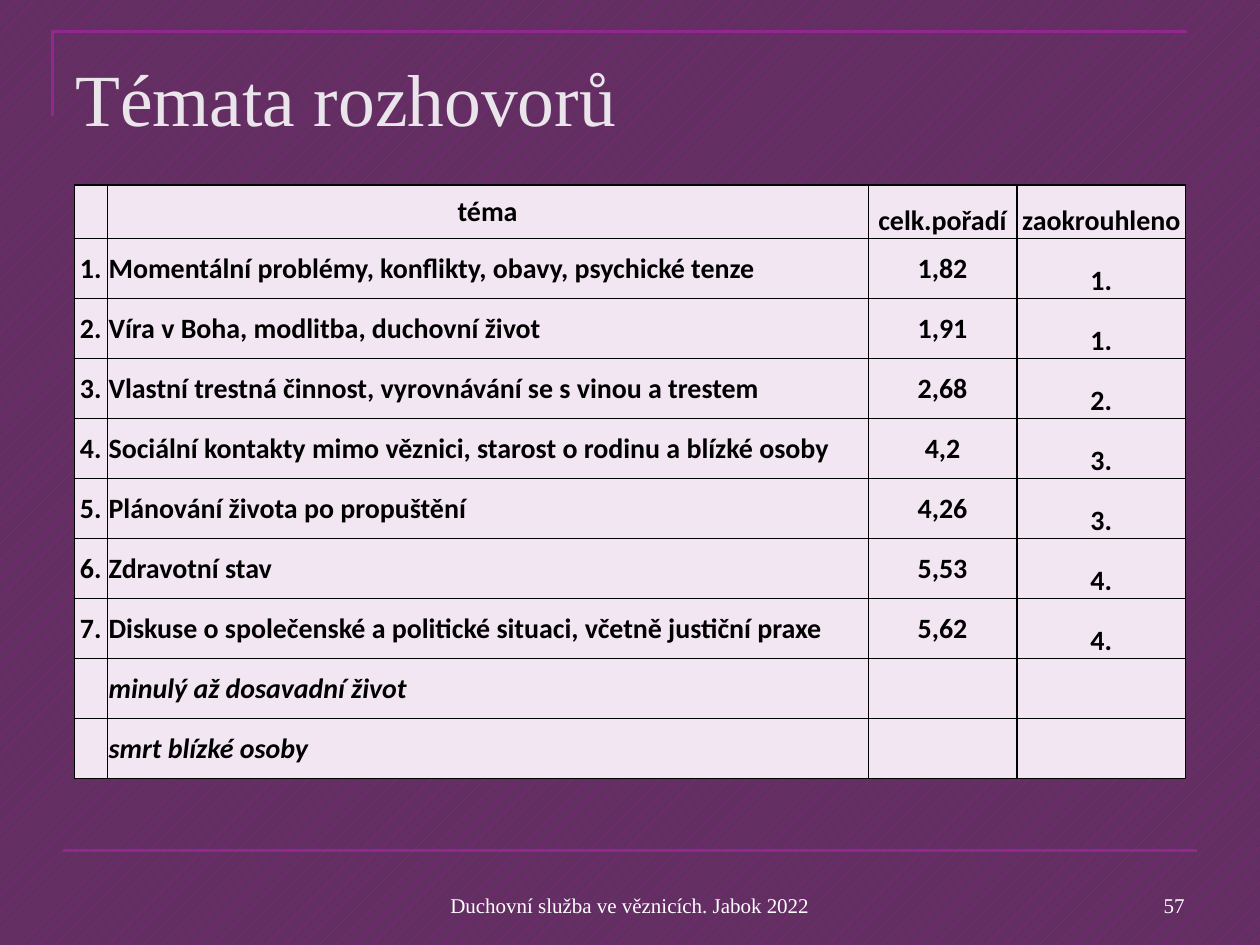
"""Build the slide that ranks the topics of conversations."""
from lxml import etree
from pptx import Presentation
from pptx.dml.color import RGBColor
from pptx.enum.dml import MSO_PATTERN
from pptx.enum.shapes import MSO_CONNECTOR
from pptx.enum.text import MSO_ANCHOR, PP_ALIGN
from pptx.oxml.ns import qn
from pptx.util import Cm, Pt

LEFT, CENTER, RIGHT = PP_ALIGN.LEFT, PP_ALIGN.CENTER, PP_ALIGN.RIGHT
TOP, MIDDLE, BOTTOM = MSO_ANCHOR.TOP, MSO_ANCHOR.MIDDLE, MSO_ANCHOR.BOTTOM
DOTS = MSO_PATTERN.PERCENT_5
STRAIGHT = MSO_CONNECTOR.STRAIGHT

PURPLE, DARK_PURPLE, PALE = "92278F", "632E62", "F3E6F3"
BLACK, WHITE, TITLE_COLOR = "000000", "FFFFFF", "EAE5EB"

TITLE = "Témata rozhovorů"
FOOTER = "Duchovní služba ve věznicích. Jabok 2022"
PAGE_NUMBER = "57"
ROWS = [
    ("", "téma", "celk.pořadí", "zaokrouhleno"),
    ("1.", "Momentální problémy, konflikty, obavy, psychické tenze", "1,82", "1."),
    ("2.", "Víra v Boha, modlitba, duchovní život", "1,91", "1."),
    ("3.", "Vlastní trestná činnost, vyrovnávání se s vinou a trestem", "2,68", "2."),
    ("4.", "Sociální kontakty mimo věznici, starost o rodinu a blízké osoby", "4,2", "3."),
    ("5.", "Plánování života po propuštění", "4,26", "3."),
    ("6.", "Zdravotní stav", "5,53", "4."),
    ("7.", "Diskuse o společenské a politické situaci, včetně justiční praxe", "5,62", "4."),
    ("", "minulý až dosavadní život", "", ""),
    ("", "smrt blízké osoby", "", ""),
]
FIRST_EXTRA_ROW = 8
COLUMN_WIDTHS = [0.66, 15.34, 3, 3.4]
ROW_HEIGHTS = [1.07] + [1.21] * (len(ROWS) - 1)
VERTICAL_RULES = [1, 0.5, 0.5, 1, 1]
HORIZONTAL_RULES = [1] + [0.5] * 7 + [1, 0.5, 1]


def color(value):
    return RGBColor.from_string(value)


def write_text(frame, text, font="Times New Roman", size=12, fill=WHITE,
               align=LEFT, bold=False, italic=False):
    paragraph = frame.paragraphs[0]
    paragraph.alignment = align
    run = paragraph.add_run()
    run.text = text
    run.font.name = font
    run.font.size = Pt(size)
    run.font.bold = bold
    run.font.italic = italic
    run.font.color.rgb = color(fill)


def add_text_box(slide, text, box, anchor=BOTTOM, top_inset=0.13, **text_format):
    frame = slide.shapes.add_textbox(*map(Cm, box)).text_frame
    frame.word_wrap = True
    frame.vertical_anchor = anchor
    frame.margin_top = Cm(top_inset)
    write_text(frame, text, **text_format)


def style_line(shape):
    shape.line.color.rgb = color(PURPLE)
    shape.line.width = Pt(1.5)


def add_frame_lines(slide):
    builder = slide.shapes.build_freeform(Cm(1.06), Cm(2.33))
    builder.add_line_segments(
        [(Cm(1.06), Cm(0.63)), (Cm(23.92), Cm(0.63))], close=False)
    corner = builder.convert_to_shape()
    corner.shadow.inherit = False
    corner.fill.background()
    style_line(corner)
    rule = slide.shapes.add_connector(
        STRAIGHT, Cm(1.27), Cm(17.15), Cm(24.13), Cm(17.15))
    etree.SubElement(rule._element.spPr, qn("a:effectLst"))
    style_line(rule)


def set_borders(cell, widths):
    properties = cell._tc.get_or_add_tcPr()
    for side, width in zip("LRTB", widths):
        line = etree.SubElement(properties, qn(f"a:ln{side}"), w=str(Pt(width)))
        fill = etree.SubElement(line, qn("a:solidFill"))
        etree.SubElement(fill, qn("a:srgbClr"), val=BLACK)


def fill_cell(cell, text, row, column):
    set_borders(cell, VERTICAL_RULES[column:column + 2] + HORIZONTAL_RULES[row:row + 2])
    cell.fill.solid()
    cell.fill.fore_color.rgb = color(PALE)
    cell.margin_left = cell.margin_right = cell.margin_top = Cm(0.03)
    cell.margin_bottom = 0
    at_bottom = column == 3 or (row == 0 and column == 2)
    cell.vertical_anchor = BOTTOM if at_bottom else MIDDLE
    if text:
        write_text(cell.text_frame, text, font="Calibri", size=16, fill=BLACK,
                   align=LEFT if column == 1 and row else CENTER,
                   bold=True, italic=row >= FIRST_EXTRA_ROW)


def add_topic_table(slide):
    table = slide.shapes.add_table(
        len(ROWS), len(COLUMN_WIDTHS), Cm(1.5), Cm(3.73),
        Cm(sum(COLUMN_WIDTHS)), Cm(sum(ROW_HEIGHTS))).table
    table.first_row = table.horz_banding = False
    for column, width in zip(table.columns, COLUMN_WIDTHS):
        column.width = Cm(width)
    for row, height in zip(table.rows, ROW_HEIGHTS):
        row.height = Cm(height)
    for row, texts in enumerate(ROWS):
        for column, text in enumerate(texts):
            fill_cell(table.cell(row, column), text, row, column)


def main():
    presentation = Presentation()
    presentation.slide_width, presentation.slide_height = Cm(25.4), Cm(19.05)
    slide = presentation.slides.add_slide(presentation.slide_layouts[6])
    background = slide.background.fill
    background.patterned()
    background.pattern = DOTS
    background.fore_color.rgb = color(PURPLE)
    background.back_color.rgb = color(DARK_PURPLE)
    add_frame_lines(slide)
    add_text_box(slide, TITLE, (1.27, 0.76, 22.86, 3.18), anchor=TOP,
                 top_inset=0.3, size=42, fill=TITLE_COLOR)
    add_topic_table(slide)
    add_text_box(slide, FOOTER, (8.68, 17.35, 8.04, 1.27), align=CENTER)
    add_text_box(slide, PAGE_NUMBER, (18.2, 17.35, 5.93, 1.27), align=RIGHT)
    presentation.save("out.pptx")


if __name__ == "__main__":
    main()
